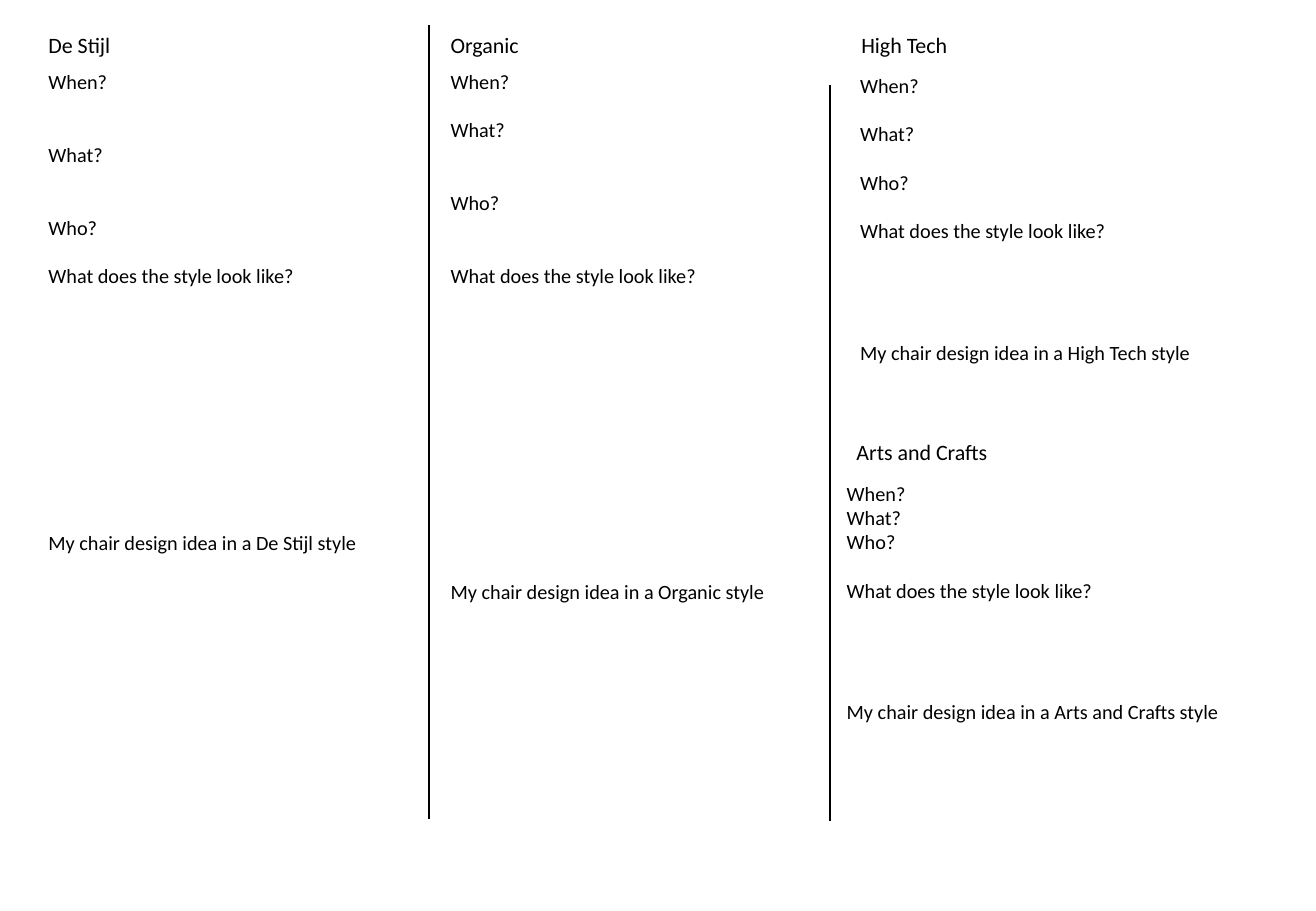
from pptx import Presentation
from pptx.dml.color import RGBColor
from pptx.enum.shapes import MSO_CONNECTOR
from pptx.enum.text import MSO_AUTO_SIZE
from pptx.oxml.ns import qn
from pptx.util import Inches, Pt
from lxml import etree

STRAIGHT = MSO_CONNECTOR.STRAIGHT
GROW = MSO_AUTO_SIZE.SHAPE_TO_FIT_TEXT
BLACK = "000000"
LINE = 14.4  # height of one 12 pt writing line, in points
PROMPTS = ["When?", "What?", "Who?", "What does the style look like?"]


def paint(color):
    return RGBColor.from_string(color)


def add_text(slide, box, lines, size, gaps):
    """Add a text box; gaps holds the free writing lines above each line."""
    frame = slide.shapes.add_textbox(*map(Inches, box)).text_frame
    frame.word_wrap = True
    frame.auto_size = GROW
    for i, (line, gap) in enumerate(zip(lines, gaps)):
        par = frame.paragraphs[0] if i == 0 else frame.add_paragraph()
        par.space_before = Pt(gap * LINE)
        run = par.add_run()
        run.text = line
        run.font.name = "Calibri"
        run.font.size = Pt(size)
        run.font.color.rgb = paint(BLACK)


prs = Presentation()
prs.slide_width = Inches(10.83)
prs.slide_height = Inches(7.5)
slide = prs.slides.add_slide(prs.slide_layouts[6])

# Column dividers: x, top, bottom
for x, top, bottom in [(3.53, 0.21, 6.74), (6.83, 0.7, 6.76)]:
    rule = slide.shapes.add_connector(
        STRAIGHT, Inches(x), Inches(top), Inches(x), Inches(bottom))
    rule.line.color.rgb = paint(BLACK)
    rule.line.width = Pt(0.75)
    etree.SubElement(rule._element.spPr, qn("a:effectLst"))

# Style, heading position, prompt box, free lines above each prompt
styles = [
    ("De Stijl", (0.3, 0.21), (0.3, 0.52, 3.31, 4.14), [0, 2, 2, 1, 10]),
    ("Organic", (3.61, 0.21), (3.61, 0.52, 3.31, 4.54), [0, 1, 2, 2, 12]),
    ("High Tech", (6.99, 0.21), (6.98, 0.55, 3.63, 2.52), [0, 1, 1, 1, 4]),
    ("Arts and Crafts", (6.95, 3.56), (6.87, 3.91, 3.96, 2.12), [0, 0, 0, 1, 4]),
]
for style, spot, box, gaps in styles:
    add_text(slide, (*spot, 2.28, 0.32), [style], 13, [0])
    idea = f"My chair design idea in a {style} style"
    add_text(slide, box, PROMPTS + [idea], 12, gaps)

prs.save("out.pptx")
